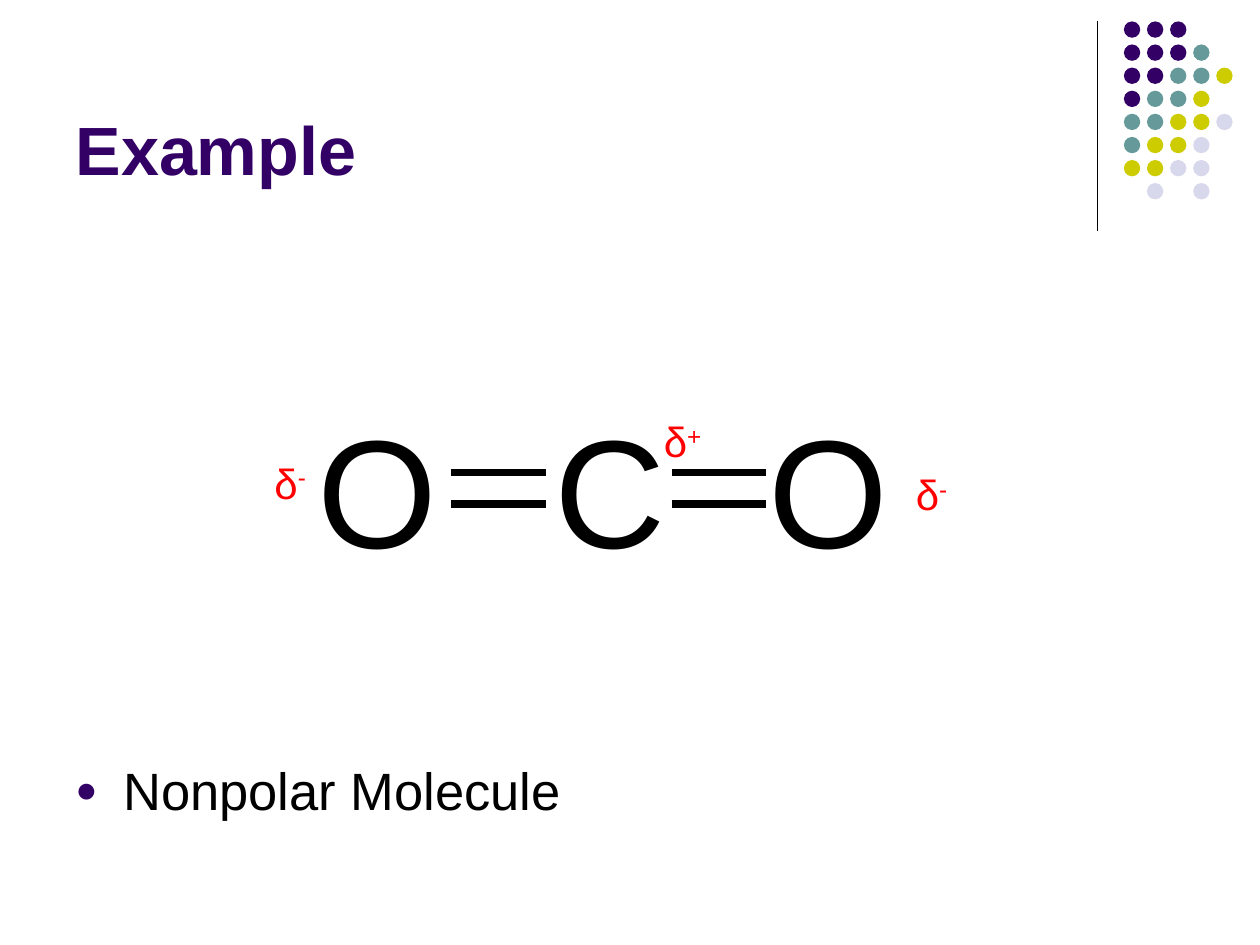
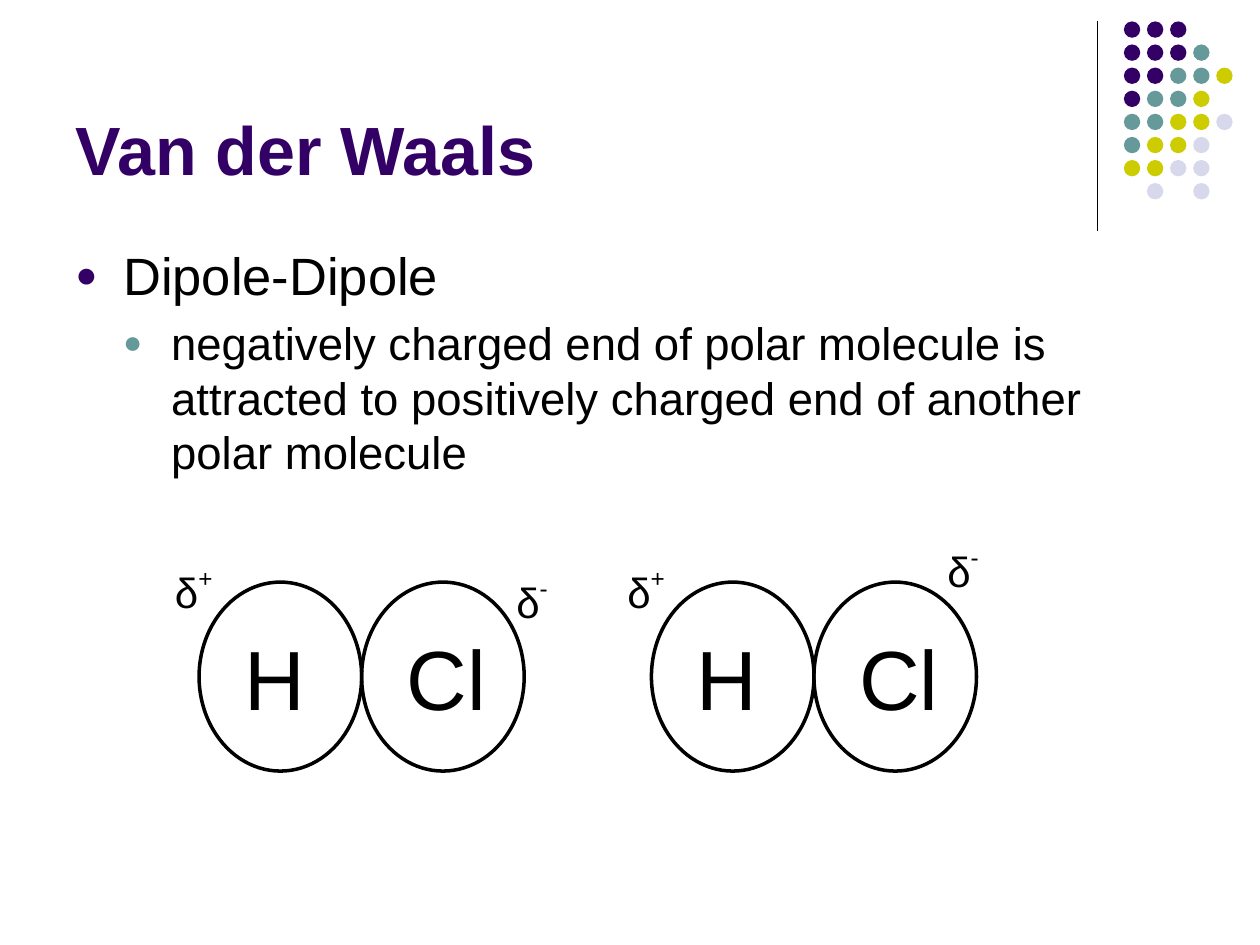
from lxml.etree import SubElement
from pptx import Presentation
from pptx.dml.color import RGBColor
from pptx.enum.shapes import MSO_CONNECTOR as Connector, MSO_SHAPE as Preset
from pptx.enum.text import MSO_ANCHOR as Anchor, MSO_AUTO_SIZE as AutoSize, PP_ALIGN as Align
from pptx.oxml.ns import qn
from pptx.util import Inches, Pt

COLORS = {"purple": "330066", "teal": "669999", "olive": "CCCC00",
          "lavender": "D8D8EC", "black": "000000", "red": "FF0000"}
FONT = "Arial"
TITLE_BOX = (0.5, 0.13, 8.25, 1.42)

# Corner dots: one letter per dot, a space where there is none
DOT_ROWS = ["PPP", "PPPT", "PPTTO", "PTTO", "TTOOL", "TOOL", "OOLL", " L L"]
DOT_COLORS = {"P": "purple", "T": "teal", "O": "olive", "L": "lavender"}
DOT_SIZE, DOT_PITCH = 0.13, 0.55 / 3

# Size, bullet colour of each outline level
LEVELS = [(30, "purple"), (26, "teal")]
LEVEL_INDENT = 0.38


def rgb(name):
    return RGBColor.from_string(COLORS[name])


def inches(*lengths):
    return [Inches(length) for length in lengths]


def format_run(run, size, color="black", bold=False):
    run.font.name = FONT
    run.font.size = Pt(size)
    run.font.bold = bold
    run.font.color.rgb = rgb(color)


def add_line(slide, x1, y1, x2, y2, width):
    line = slide.shapes.add_connector(Connector.STRAIGHT, *inches(x1, y1, x2, y2))
    line.line.color.rgb = rgb("black")
    line.line.width = Pt(width)
    SubElement(line._element.spPr, qn("a:effectLst"))


def add_ellipse(shapes, left, top, width, height):
    ellipse = shapes.add_shape(Preset.OVAL, *inches(left, top, width, height))
    ellipse.shadow.inherit = False
    return ellipse


def add_label(slide, box, text, size, color="black"):
    label = slide.shapes.add_textbox(*inches(*box))
    frame = label.text_frame
    frame.word_wrap = False
    frame.auto_size = AutoSize.SHAPE_TO_FIT_TEXT
    frame.text = text
    format_run(frame.paragraphs[0].runs[0], size, color)
    return label


def add_charge(slide, left, top, sign, color, raise_percent):
    """Partial charge: a delta with a raised sign."""
    width = 0.52 if sign == "+" else 0.46
    label = add_label(slide, (left, top, width, 0.51), "δ", 24, color)
    run = label.text_frame.paragraphs[0].add_run()
    run.text = sign
    format_run(run, 24, color)
    run.font._element.set("baseline", str(raise_percent * 1000))


def add_corner(slide, left, top):
    """Rule and dot pattern in the upper right corner."""
    add_line(slide, left, top, left, top + 1.66, 0.75)
    dots = slide.shapes.add_group_shape().shapes
    for row, letters in enumerate(DOT_ROWS):
        for column, letter in enumerate(letters):
            if letter == " ":
                continue
            dot = add_ellipse(dots, left + 0.21 + column * DOT_PITCH,
                              top + row * DOT_PITCH, DOT_SIZE, DOT_SIZE)
            dot.fill.solid()
            dot.fill.fore_color.rgb = rgb(DOT_COLORS[letter])
            dot.line.fill.background()


def add_titled_slide(presentation, title_text):
    slide = presentation.slides.add_slide(presentation.slide_layouts[5])
    add_corner(slide, 8.71, 0.17)
    title = slide.shapes.title
    title.left, title.top, title.width, title.height = inches(*TITLE_BOX)
    frame = title.text_frame
    frame.text = title_text
    frame.word_wrap = True
    frame.auto_size = AutoSize.NONE
    frame.vertical_anchor = Anchor.BOTTOM
    paragraph = frame.paragraphs[0]
    paragraph.alignment = Align.LEFT
    format_run(paragraph.runs[0], 39, "purple", bold=True)
    return slide


def add_outline(slide, box, items):
    """Bulleted text from (level, text) pairs."""
    frame = slide.shapes.add_textbox(*inches(*box)).text_frame
    frame.word_wrap = True
    for index, (level, text) in enumerate(items):
        paragraph = frame.add_paragraph() if index else frame.paragraphs[0]
        size, bullet_color = LEVELS[level]
        paragraph.text = text
        paragraph.level = level
        paragraph.space_before = Pt(size * 0.2)
        format_run(paragraph.runs[0], size)
        properties = paragraph._p.get_or_add_pPr()
        properties.set("marL", str(Inches(LEVEL_INDENT * (level + 1))))
        properties.set("indent", str(-Inches(LEVEL_INDENT)))
        color = SubElement(properties, qn("a:buClr"))
        SubElement(color, qn("a:srgbClr"), val=COLORS[bullet_color])
        SubElement(properties, qn("a:buSzPct"), val="70000")
        SubElement(properties, qn("a:buFont"), typeface=FONT)
        SubElement(properties, qn("a:buChar"), char="●")


def add_carbon_dioxide(slide, left, top):
    """O=C=O with double bonds and partial charges."""
    for x, width, atom in [(0.34, 1.16, "O"), (2.22, 1.09, "C"), (3.92, 1.16, "O")]:
        add_label(slide, (left + x, top, width, 1.58), atom, 88)
    for x in (1.5, 3.25):
        for y in (0.67, 0.92):
            add_line(slide, left + x, top + y, left + x + 0.75, top + y, 4.25)
    for x, y, sign in [(0, 0.5, "-"), (3.09, 0.17, "+"), (5.09, 0.59, "-")]:
        add_charge(slide, left + x, top + y, sign, "red", 30)


def add_hydrogen_chloride(slide, left, top, minus_x, minus_y):
    """Two touching atoms, with the minus charge at the given offset."""
    atom_width = 1.29
    for index, (atom, width) in enumerate([("H", 0.69), ("Cl", 0.84)]):
        x = left + index * atom_width
        outline = add_ellipse(slide.shapes, x, top, atom_width, 1.5)
        outline.fill.background()
        outline.line.color.rgb = rgb("black")
        outline.line.width = Pt(2)
        add_label(slide, (x + 0.26, top + 0.3, width, 0.91), atom, 48)
    add_charge(slide, left - 0.29, top - 0.2, "+", "black", 50)
    add_charge(slide, left + minus_x, top + minus_y, "-", "black", 50)


def build_example_slide(presentation):
    slide = add_titled_slide(presentation, "Example")
    add_outline(slide, (0.5, 5.97, 9, 0.73), [(0, "Nonpolar Molecule")])
    add_carbon_dioxide(slide, 2.08, 3.08)


def build_dipole_slide(presentation):
    slide = add_titled_slide(presentation, "Van der Waals")
    add_outline(slide, (0.5, 1.88, 9, 4.82), [
        (0, "Dipole-Dipole"),
        (1, "negatively charged end of polar molecule is attracted to "
            "positively charged end of another polar molecule"),
    ])
    add_hydrogen_chloride(slide, 1.58, 4.62, 2.42, -0.12)
    add_hydrogen_chloride(slide, 5.17, 4.62, 2.25, -0.37)


def main():
    presentation = Presentation()
    presentation.slide_width, presentation.slide_height = inches(10, 7.5)
    build_example_slide(presentation)
    build_dipole_slide(presentation)
    presentation.save("out.pptx")


if __name__ == "__main__":
    main()
